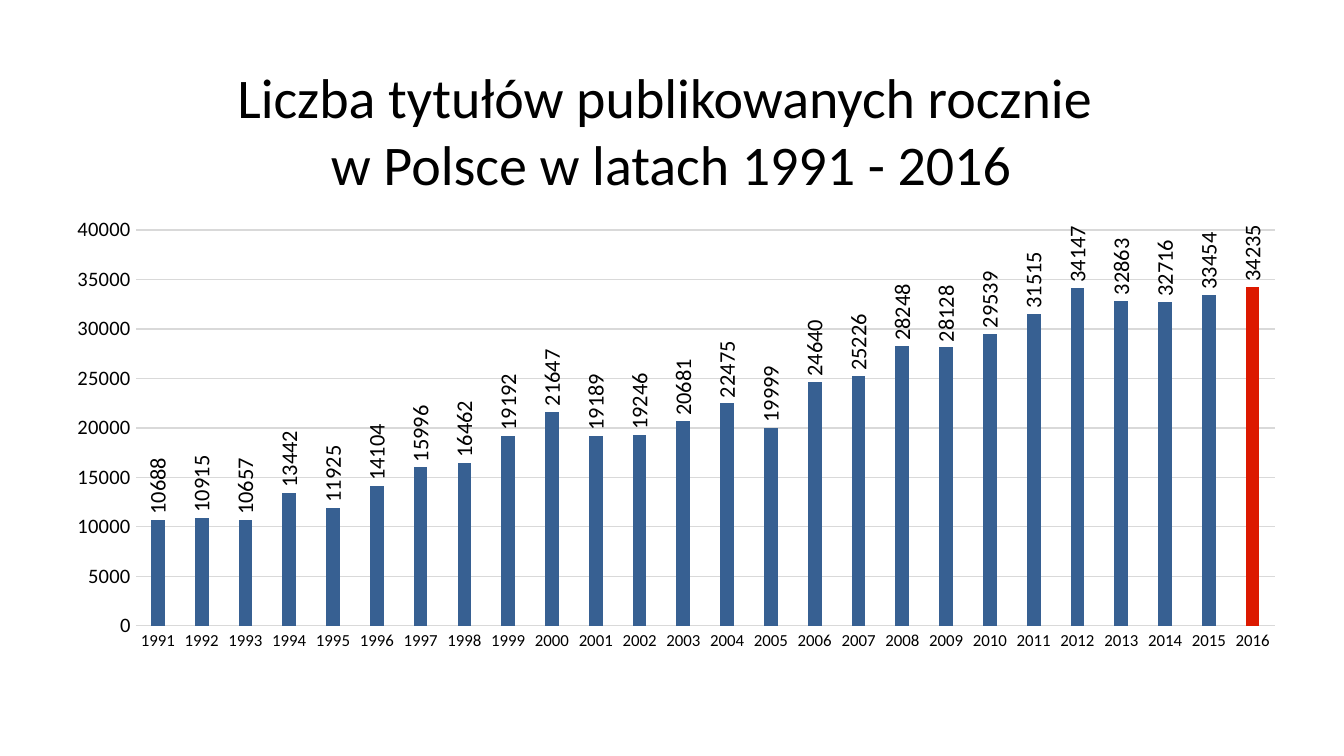
from lxml.etree import SubElement
from pptx import Presentation
from pptx.chart.data import CategoryChartData as ChartData
from pptx.dml.color import RGBColor
from pptx.enum.chart import XL_CHART_TYPE as ChartType
from pptx.enum.chart import XL_LABEL_POSITION as LabelPosition
from pptx.enum.chart import XL_TICK_MARK as TickMark
from pptx.enum.text import MSO_ANCHOR as Anchor
from pptx.enum.text import PP_ALIGN as Align
from pptx.oxml.ns import qn
from pptx.util import Inches, Pt

COLORS = {"text": "000000", "bar": "376092", "highlight": "DC1900", "grid": "D9D9D9"}
FIRST_YEAR = 1991
TITLES_PER_YEAR = [
    10688, 10915, 10657, 13442, 11925, 14104, 15996, 16462, 19192,
    21647, 19189, 19246, 20681, 22475, 19999, 24640, 25226, 28248,
    28128, 29539, 31515, 34147, 32863, 32716, 33454, 34235,
]
PLOT_AREA = {"x": 0.067, "y": 0.092, "w": 0.913, "h": 0.816}


class SlideBuilder:
    font_name = "Calibri"

    def __init__(self, slide):
        self.slide = slide

    def color(self, name):
        return RGBColor.from_string(COLORS[name])

    def style_font(self, font, size):
        font.name = self.font_name
        font.size = Pt(size)
        font.bold = False
        font.color.rgb = self.color("text")

    def style_fill(self, item, name):
        item.format.fill.solid()
        item.format.fill.fore_color.rgb = self.color(name)

    def style_line(self, line):
        line.color.rgb = self.color("grid")
        line.width = Pt(0.75)

    def title(self, lines, box, size):
        shape = self.slide.shapes.add_textbox(*map(Inches, box))
        frame = shape.text_frame
        frame.word_wrap = True
        frame.vertical_anchor = Anchor.MIDDLE
        paragraph = frame.paragraphs[0]
        paragraph.alignment = Align.CENTER
        for index, line in enumerate(lines):
            if index:
                paragraph.add_line_break()
            run = paragraph.add_run()
            run.text = line
            self.style_font(run.font, size)

    def place_plot(self, chart, area):
        plot_area = chart.element.find(".//" + qn("c:plotArea"))
        for old_layout in plot_area.findall(qn("c:layout")):
            plot_area.remove(old_layout)
        layout = SubElement(plot_area, qn("c:layout"))
        plot_area.insert(0, layout)
        manual = SubElement(layout, qn("c:manualLayout"))
        settings = {"layoutTarget": "inner", "xMode": "edge", "yMode": "edge", **area}
        for name, value in settings.items():
            SubElement(manual, qn("c:" + name)).set("val", str(value))

    def style_axes(self, chart):
        for axis, size in ((chart.category_axis, 9), (chart.value_axis, 11)):
            axis.major_tick_mark = axis.minor_tick_mark = TickMark.NONE
            self.style_font(axis.tick_labels.font, size)
        self.style_line(chart.category_axis.format.line)
        values = chart.value_axis
        values.minimum_scale, values.maximum_scale, values.major_unit = 0, 40000, 5000
        values.format.line.fill.background()
        values.has_major_gridlines = True
        self.style_line(values.major_gridlines.format.line)

    def column_chart(self, categories, values, box):
        data = ChartData()
        data.categories = categories
        data.add_series("Series 1", values)
        chart = self.slide.shapes.add_chart(
            ChartType.COLUMN_CLUSTERED, *map(Inches, box), data
        ).chart
        chart.has_title = False
        chart.has_legend = False
        self.style_font(chart.font, 10)
        self.style_axes(chart)
        self.place_plot(chart, PLOT_AREA)

        plot = chart.plots[0]
        plot.vary_by_categories = False
        plot.gap_width = 219
        plot.overlap = -27
        series = plot.series[0]
        series.invert_if_negative = False
        self.style_fill(series, "bar")
        self.style_fill(series.points[len(values) - 1], "highlight")

        labels = series.data_labels
        labels.show_value = True
        labels.position = LabelPosition.OUTSIDE_END
        self.style_font(labels.font, 12)
        body = chart.element.find(".//" + qn("c:dLbls")).find(".//" + qn("a:bodyPr"))
        body.set("rot", "-5400000")
        body.set("vert", "horz")


def main():
    presentation = Presentation()
    presentation.slide_width = Inches(10)
    presentation.slide_height = presentation.slide_width * 9 // 16
    slide = presentation.slides.add_slide(presentation.slide_layouts[6])
    builder = SlideBuilder(slide)
    builder.title(
        ["Liczba tytułów publikowanych rocznie ", "w Polsce w latach 1991 - 2016"],
        (1.07, 0.41, 7.85, 1.11),
        30,
    )
    years = [FIRST_YEAR + index for index in range(len(TITLES_PER_YEAR))]
    builder.column_chart(years, TITLES_PER_YEAR, (0.39, 1.38, 9.28, 3.61))
    presentation.save("out.pptx")


if __name__ == "__main__":
    main()
